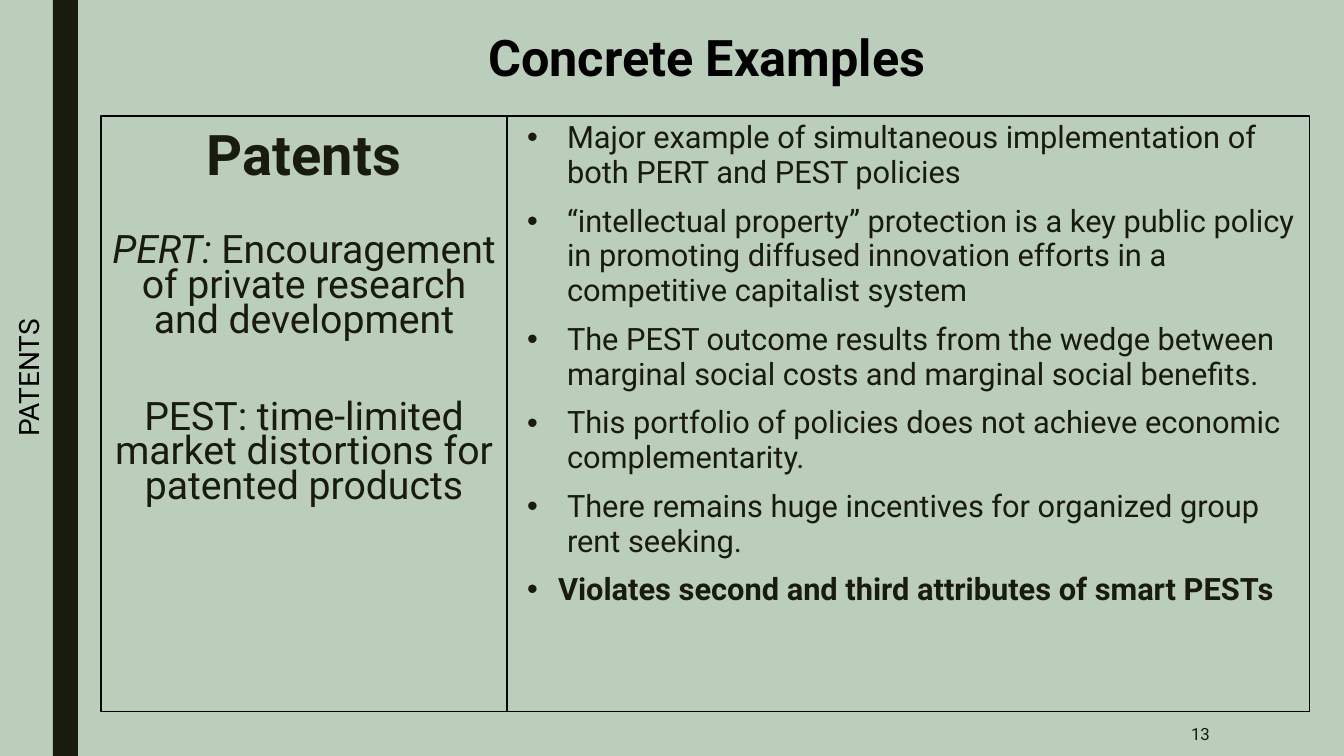
from pptx import Presentation
from pptx.dml.color import RGBColor
from pptx.enum.shapes import MSO_SHAPE
from pptx.enum.text import MSO_ANCHOR, MSO_AUTO_SIZE, PP_ALIGN
from pptx.util import Emu, Pt
from lxml.etree import SubElement
from pptx.oxml.ns import qn

HUE = {"back": "BBCDBB", "ink": "191B0E", "black": "000000"}
FONT = "Roboto"
TITLE = "Concrete Examples"
SIDE = "PATENTS"
PAGE = "13"
LEFT = [
    (0, 40, [("Patents", True, False)]),
    (36, 28, [("PERT: ", False, True),
              ("Encouragement of private research and development", False, False)]),
    (44, 28, [("PEST: time-limited market distortions for patented products", False, False)]),
]
RIGHT = [
    ("Major example of simultaneous implementation of both PERT and PEST policies", False),
    ("“intellectual property” protection is a key public policy in promoting diffused "
     "innovation efforts in a competitive capitalist system", False),
    ("The PEST outcome results from the wedge between marginal social costs and "
     "marginal social benefits.", False),
    ("This portfolio of policies does not achieve economic complementarity.", False),
    ("There remains huge incentives for organized group rent seeking.", False),
    ("Violates second and third attributes of smart PESTs", True),
]
WIDE, HIGH = 1344, 756
TOP, TALL = 116, 596
EDGE, SPLIT, END = 101, 507, 1310


def px(n):
    return Emu(round(n * 914400 / 100.8))


def place(shape, x, y, w, h):
    shape.left, shape.top, shape.width, shape.height = map(px, (x, y, w, h))


def frame(shape, anchor=MSO_ANCHOR.TOP, top=5):
    text = shape.text_frame
    text.word_wrap = True
    text.auto_size = MSO_AUTO_SIZE.NONE
    text.vertical_anchor = anchor
    text.margin_left = text.margin_right = px(10)
    text.margin_top, text.margin_bottom = px(top), px(5)
    return text


def paras(text, items):
    for i, item in enumerate(items):
        yield (text.add_paragraph() if i else text.paragraphs[0]), item


def add_run(para, words, size, hue="ink", bold=False, slant=False):
    run = para.add_run()
    run.text = words
    font = run.font
    font.name, font.size, font.bold, font.italic = FONT, Pt(size), bold, slant
    font.color.rgb = RGBColor.from_string(HUE[hue])


def space(para, line, before):
    para.line_spacing = line
    para.space_before, para.space_after = Pt(before), Pt(0)


def bullet(para, left, hang, mark=None):
    props = para._p.get_or_add_pPr()
    props.set("marL", str(px(left)))
    props.set("indent", str(px(-hang)))
    if not mark:
        SubElement(props, qn("a:buNone"))
        return
    tint = SubElement(props, qn("a:buClr"))
    SubElement(tint, qn("a:srgbClr")).set("val", HUE["ink"])
    SubElement(props, qn("a:buFont")).set("typeface", "Arial")
    SubElement(props, qn("a:buChar")).set("char", mark)


def border(shape):
    shape.line.color.rgb = RGBColor.from_string(HUE["black"])
    shape.line.width = Pt(0.75)


def label(slide, box, words, size, hue, align):
    shape = slide.shapes.add_textbox(*map(px, box))
    para = frame(shape, MSO_ANCHOR.MIDDLE).paragraphs[0]
    para.alignment = align
    add_run(para, words, size, hue)
    return shape


def main():
    deck = Presentation()
    deck.slide_width, deck.slide_height = px(WIDE), px(HIGH)
    slide = deck.slides.add_slide(deck.slide_layouts[3])
    fill = slide.background.fill
    fill.solid()
    fill.fore_color.rgb = RGBColor.from_string(HUE["back"])

    bar = slide.shapes.add_shape(MSO_SHAPE.RECTANGLE, px(53), 0, px(25), px(HIGH))
    bar.shadow.inherit = False
    bar.fill.solid()
    bar.fill.fore_color.rgb = RGBColor.from_string(HUE["ink"])
    bar.line.fill.background()

    title, left, right = slide.placeholders
    place(title, 70, 21, WIDE - 70, 128)
    para = frame(title).paragraphs[0]
    para.alignment = PP_ALIGN.CENTER
    add_run(para, TITLE, 36, "black", True)

    place(left, EDGE, TOP, SPLIT - EDGE, TALL)
    border(left)
    for para, (gap, size, runs) in paras(frame(left, top=20), LEFT):
        para.alignment = PP_ALIGN.CENTER
        space(para, 0.74, gap)
        bullet(para, 0, 0)
        for words, bold, slant in runs:
            add_run(para, words, size, bold=bold, slant=slant)

    place(right, SPLIT, TOP, END - SPLIT, TALL)
    border(right)
    for para, (words, bold) in paras(frame(right), RIGHT):
        space(para, 0.94, 10)
        hang = 31 if bold else 40
        bullet(para, hang + 10, hang, "•")
        add_run(para, words, 22, bold=bold)

    label(slide, (1044, 712, 176, 44), PAGE, 12, "ink", PP_ALIGN.RIGHT)
    side = label(slide, (-350, 356, HIGH, 44), SIDE, 20, "black", PP_ALIGN.CENTER)
    side.rotation = 270

    deck.save("out.pptx")


if __name__ == "__main__":
    main()
